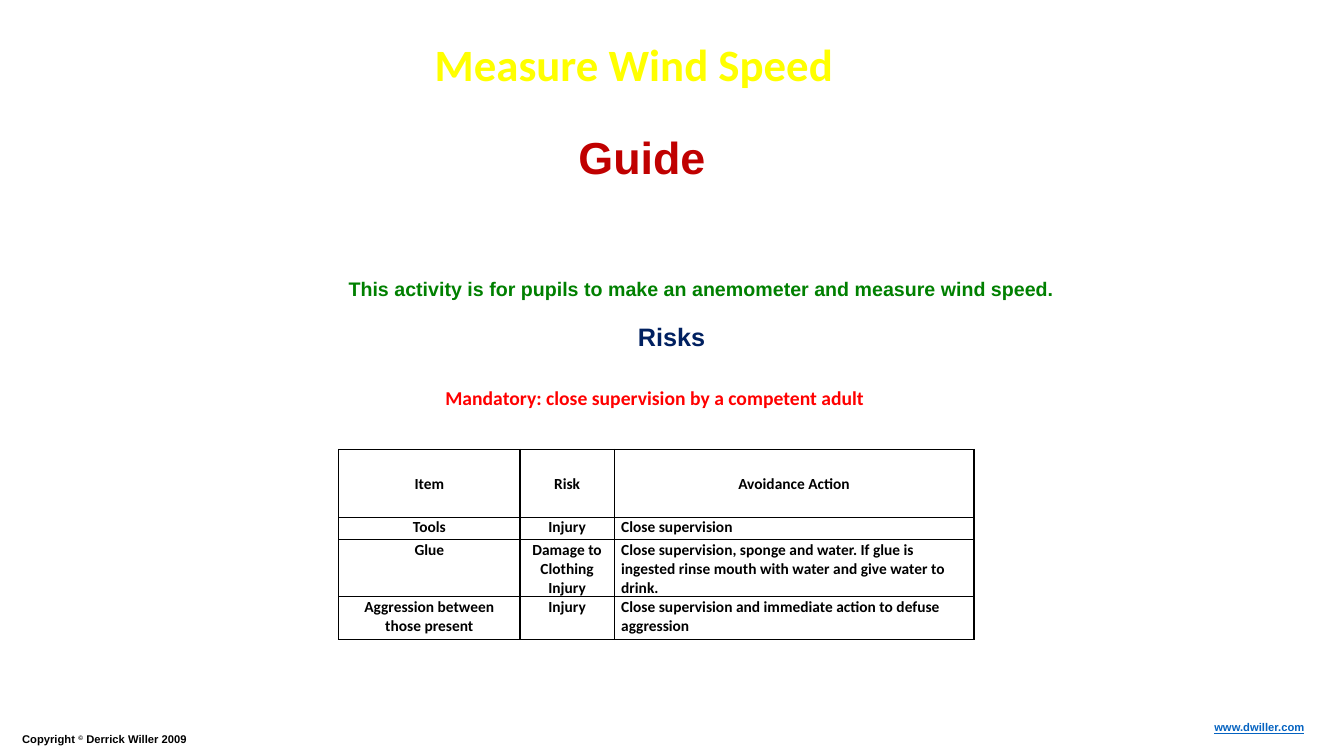
from dataclasses import dataclass

from lxml.etree import SubElement
from pptx import Presentation
from pptx.dml.color import RGBColor
from pptx.enum.text import MSO_ANCHOR as Anchor, MSO_AUTO_SIZE as AutoSize, PP_ALIGN as Align
from pptx.oxml import parse_xml
from pptx.oxml.ns import nsdecls, qn
from pptx.util import Inches, Pt


@dataclass(frozen=True)
class Theme:
    heading: str = "Calibri"
    body: str = "Arial"
    black: str = "000000"
    yellow: str = "FFFF00"
    orange: str = "ED7D31"
    crimson: str = "C00000"
    green: str = "008000"
    navy: str = "002060"
    red: str = "FF0000"
    link: str = "0563C1"
    display: int = 32
    section: int = 18
    lead: int = 14
    cell: int = 11
    footer: int = 8


THEME = Theme()


def line_xml(tag, color, width):
    return parse_xml(
        f'<a:{tag} {nsdecls("a")} w="{Pt(width)}"><a:solidFill>'
        f'<a:srgbClr val="{color}"/></a:solidFill></a:{tag}>'
    )


def write(paragraph, text, font=THEME.body, size=THEME.lead, color=THEME.black,
          align=Align.LEFT, underline=None, raised=False, outline=None):
    """Append one bold run to the paragraph."""
    paragraph.alignment = align
    run = paragraph.add_run()
    run.text = text
    run.font.name = font
    run.font.size = Pt(size)
    run.font.bold = True
    run.font.underline = underline
    run.font.color.rgb = RGBColor.from_string(color)
    properties = run.font._element
    if raised:
        properties.set("baseline", "30000")
    if outline:
        properties.insert(0, line_xml("ln", outline, 1.75))


class SlideBuilder:
    """Places elements by percentages of the slide's width and height."""

    def __init__(self, presentation, theme):
        self.theme = theme
        self.width = presentation.slide_width
        self.height = presentation.slide_height
        self.slide = presentation.slides.add_slide(presentation.slide_layouts[5])

    def across(self, share):
        return round(self.width * share / 100)

    def down(self, share):
        return round(self.height * share / 100)

    def box(self, left, top, width, height):
        return self.across(left), self.down(top), self.across(width), self.down(height)

    def title(self, text, *place, **style):
        shape = self.slide.shapes.title
        shape.left, shape.top, shape.width, shape.height = self.box(*place)
        self.fill_frame(shape.text_frame, [(text, {})], wrap=False, **style)

    def text(self, pieces, *place, wrap=True, **style):
        shape = self.slide.shapes.add_textbox(*self.box(*place))
        self.fill_frame(shape.text_frame, pieces, wrap, **style)

    def fill_frame(self, frame, pieces, wrap, **style):
        frame.word_wrap = wrap
        frame.auto_size = AutoSize.SHAPE_TO_FIT_TEXT
        frame.vertical_anchor = Anchor.TOP
        for text, extra in pieces:
            write(frame.paragraphs[0], text, **{**style, **extra})

    def table(self, rows, left, top, columns, heights):
        place = self.box(left, top, sum(columns), sum(heights))
        table = self.slide.shapes.add_table(len(rows), len(columns), *place).table
        table.first_row = table.horz_banding = False
        for column, share in zip(table.columns, columns):
            column.width = self.across(share)
        for row, share in zip(table.rows, heights):
            row.height = self.down(share)
        for row_index, texts in enumerate(rows):
            for column_index, text in enumerate(texts):
                header = row_index == 0
                centred = header or column_index < len(columns) - 1
                self.fill_cell(table.cell(row_index, column_index), text, header,
                               Align.CENTER if centred else Align.LEFT)

    def fill_cell(self, cell, text, header, align):
        cell.fill.background()
        cell.vertical_anchor = Anchor.MIDDLE if header else Anchor.TOP
        cell.margin_left = cell.margin_right = Inches(0.07)
        cell.margin_top, cell.margin_bottom = Inches(0.01), 0
        for index, line in enumerate(text.split("\n")):
            frame = cell.text_frame
            paragraph = frame.add_paragraph() if index else frame.paragraphs[0]
            write(paragraph, line, font=self.theme.heading, size=self.theme.cell, align=align)
        properties = cell._tc.get_or_add_tcPr()
        for index, side in enumerate(("lnL", "lnR", "lnT", "lnB")):
            properties.insert(index, line_xml(side, self.theme.black, 1))


RISKS = [
    ("Item", "Risk", "Avoidance Action"),
    ("Tools", "Injury", "Close supervision"),
    ("Glue", "Damage to Clothing\nInjury",
     "Close supervision, sponge and water. If glue is ingested rinse mouth "
     "with water and give water to drink."),
    ("Aggression between those present", "Injury",
     "Close supervision and immediate action to defuse aggression"),
]


def main():
    presentation = Presentation()
    presentation.slide_width, presentation.slide_height = Inches(13.33), Inches(7.5)
    builder = SlideBuilder(presentation, THEME)

    builder.title("Measure Wind Speed", 31.05, 4.13, 32.25, 8.53, font=THEME.heading,
                  size=THEME.display, color=THEME.yellow, align=Align.CENTER,
                  outline=THEME.orange)
    builder.text([("Copyright ", {}), ("©", {"raised": True}), (" Derrick Willer 2009", {})],
                 0.9, 96.27, 42.38, 3.2, size=THEME.footer)
    builder.text([("www.dwiller.com", {})], 87.75, 94.67, 10.05, 3.2, size=THEME.footer,
                 color=THEME.link, underline=True, align=Align.RIGHT)
    builder.text([("Guide", {})], 42.3, 16.53, 11.03, 8.53, wrap=False,
                 size=THEME.display, color=THEME.crimson)
    builder.text([("This activity is for pupils to make an anemometer and measure wind speed.", {})],
                 25.2, 36, 66.83, 4.53, color=THEME.green)
    builder.text([("Risks", {})], 46.73, 41.87, 6.6, 5.33, wrap=False,
                 size=THEME.section, color=THEME.navy)
    builder.table(RISKS, 25.2, 59.47, columns=(13.5, 7, 26.78),
                  heights=(8.93, 2.93, 7.54, 5.73))
    builder.text([("Mandatory: close supervision by a competent adult", {})],
                 32.4, 50.4, 32.85, 4.53, wrap=False, font=THEME.heading, color=THEME.red)

    presentation.save("out.pptx")


if __name__ == "__main__":
    main()
